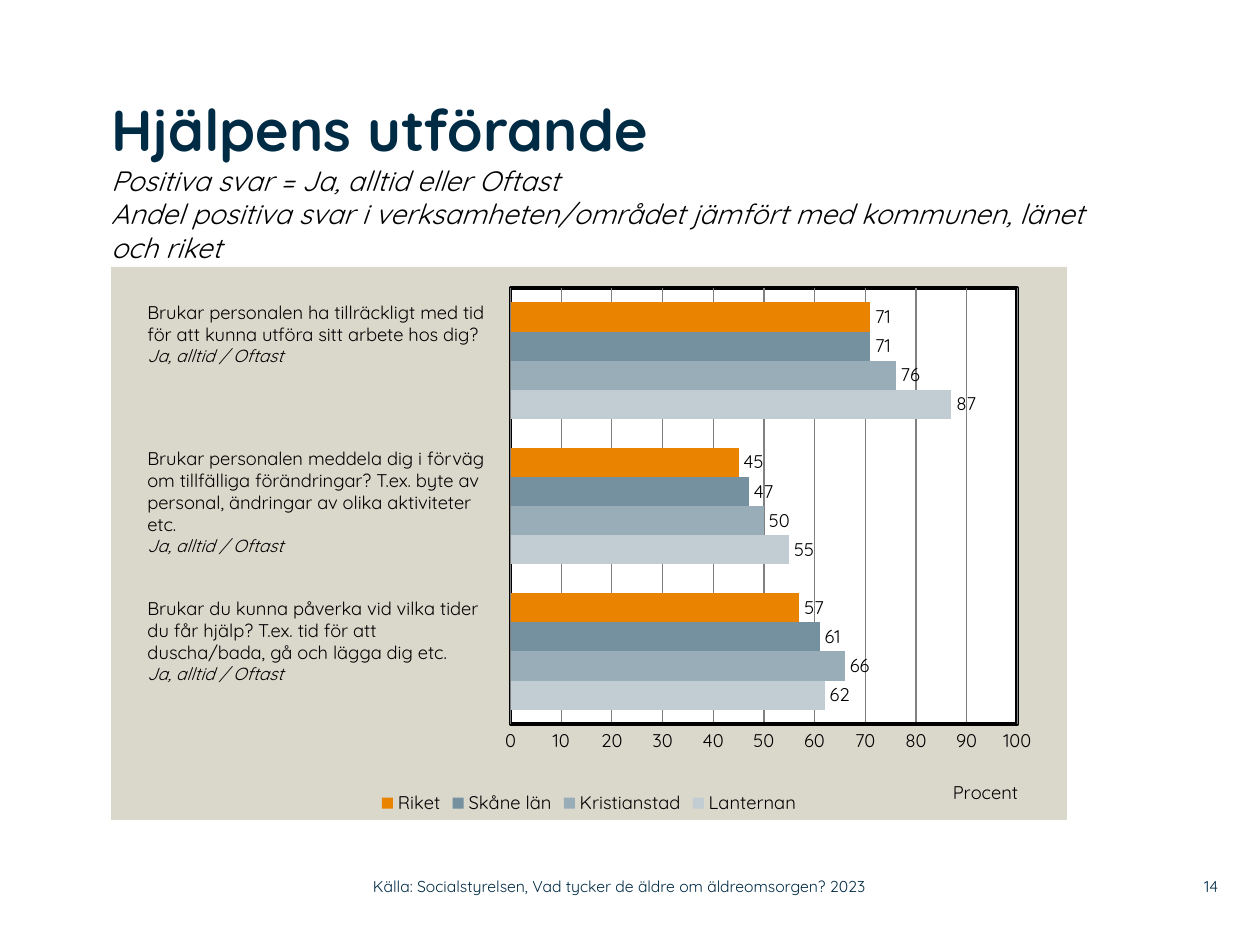
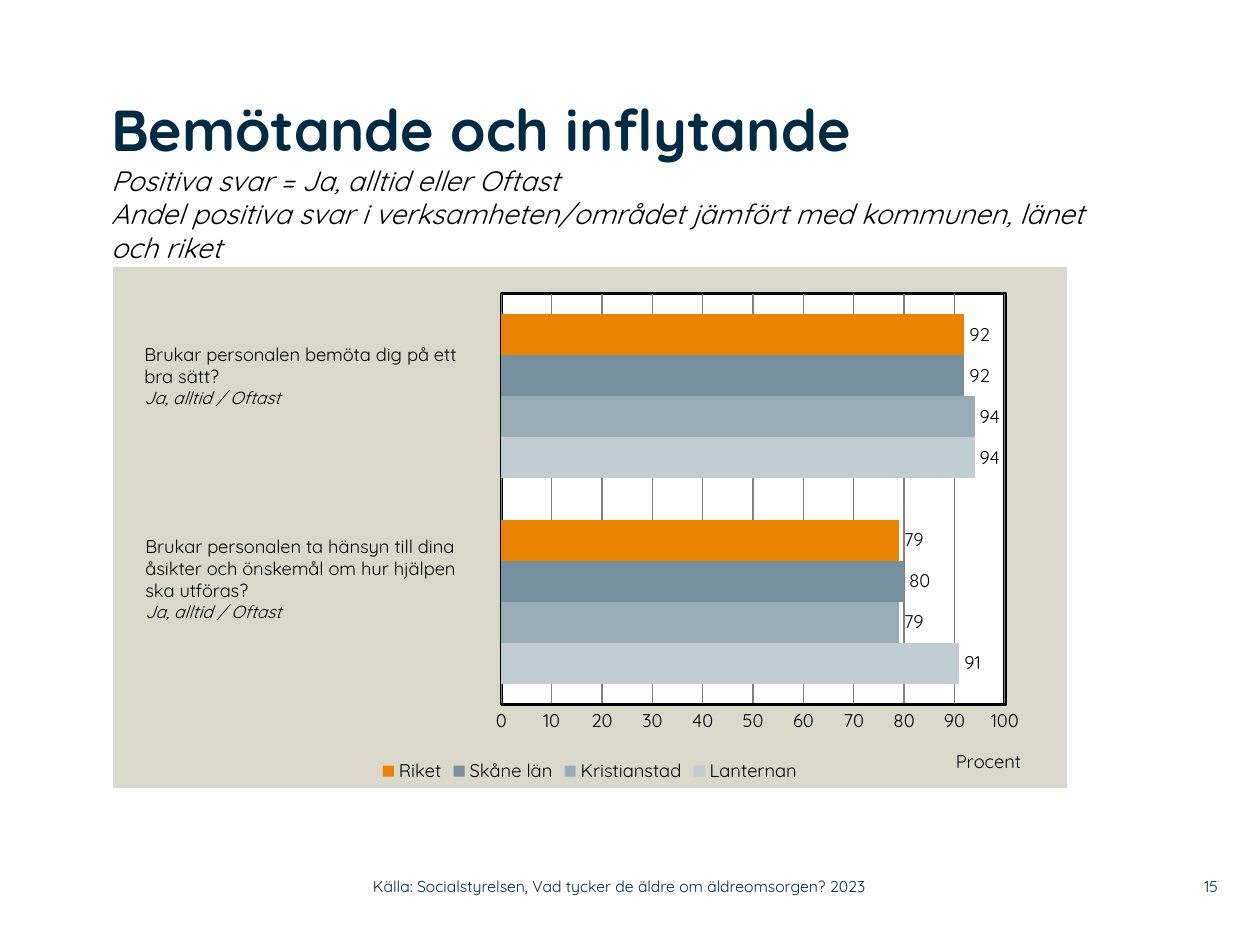
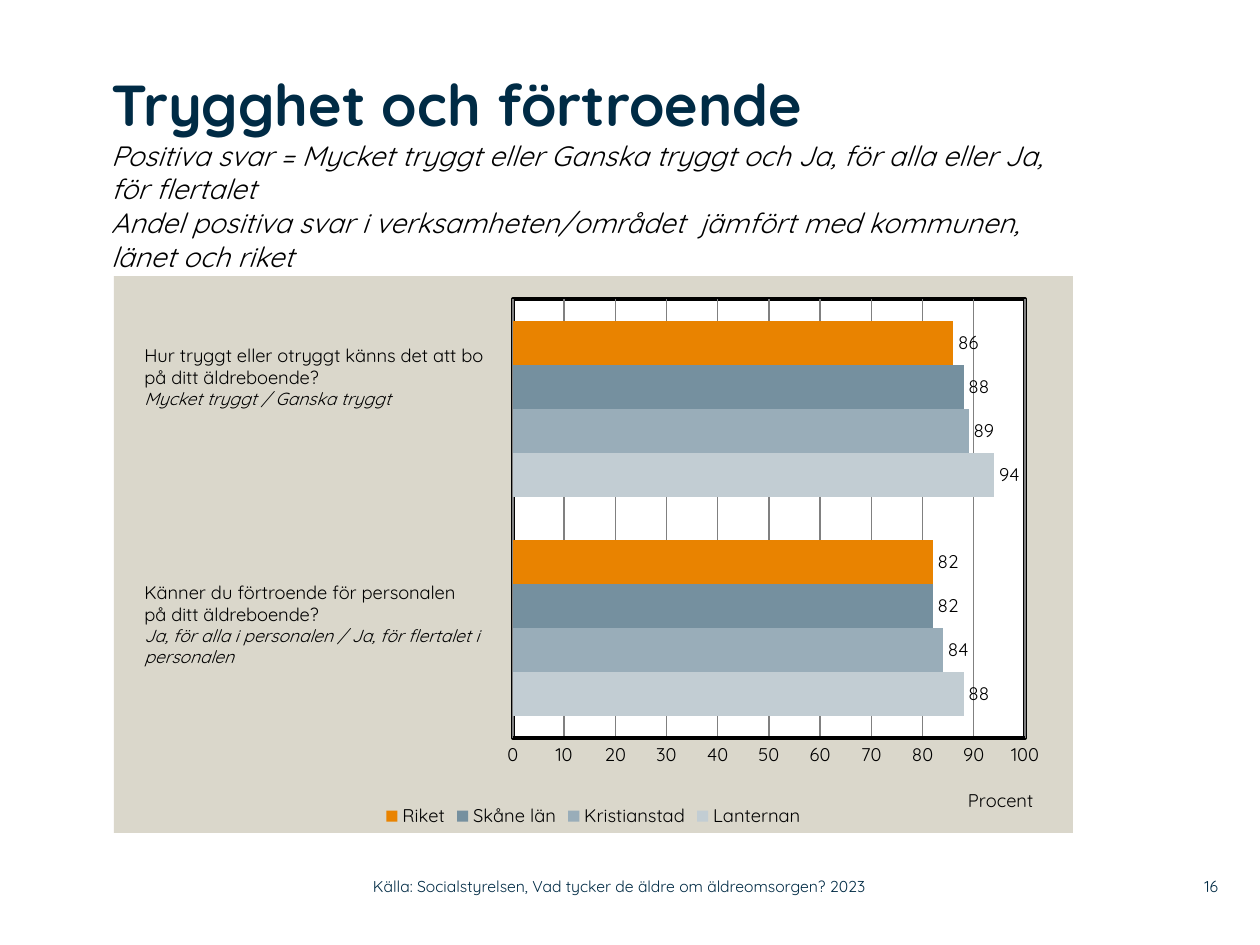
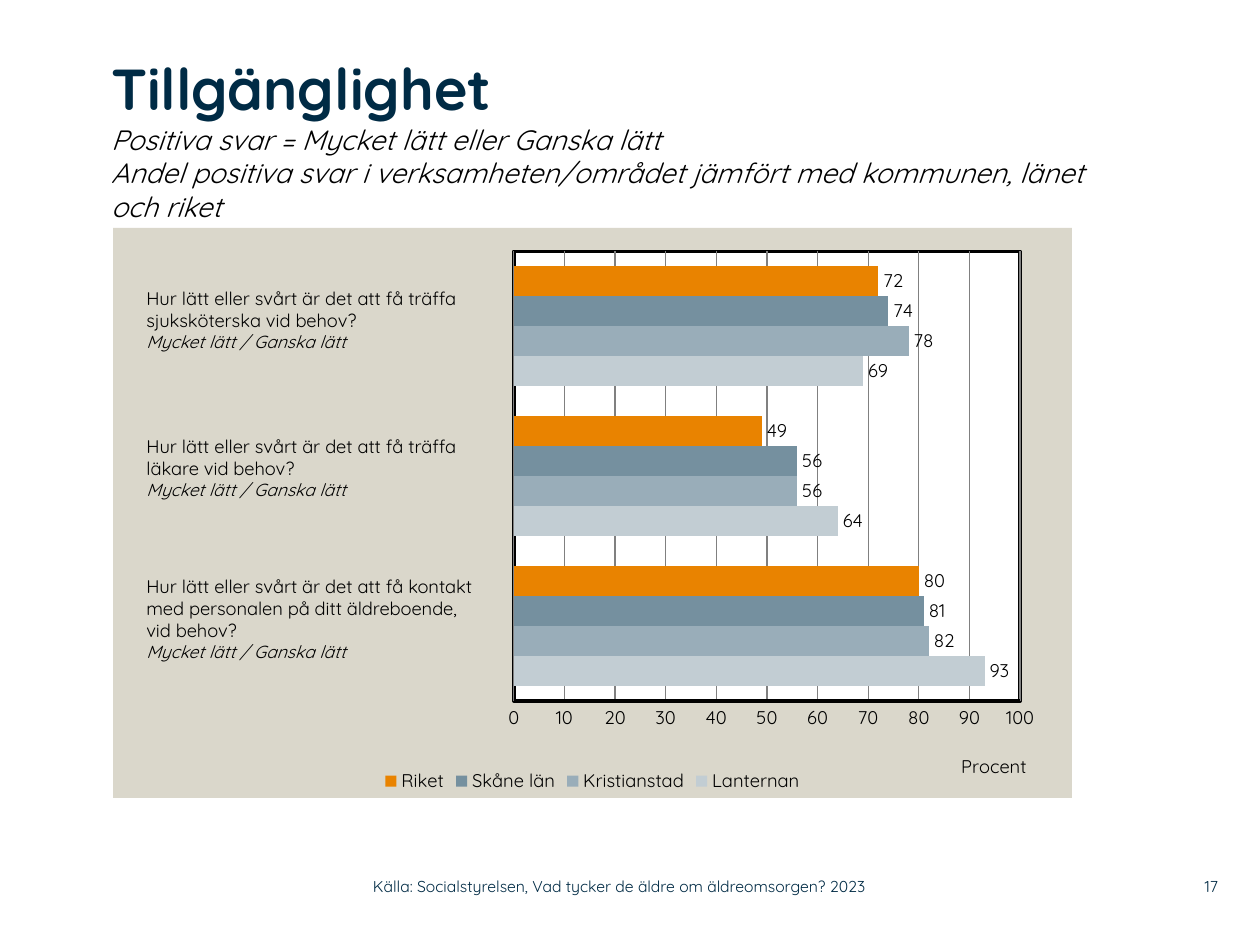
from dataclasses import dataclass

from lxml.etree import SubElement
from pptx import Presentation
from pptx.chart.data import CategoryChartData
from pptx.dml.color import RGBColor
from pptx.enum.chart import XL_CHART_TYPE, XL_LABEL_POSITION, XL_LEGEND_POSITION, XL_TICK_MARK
from pptx.enum.text import MSO_ANCHOR, MSO_AUTO_SIZE, PP_ALIGN
from pptx.oxml import parse_xml
from pptx.oxml.ns import nsdecls, qn
from pptx.util import Emu, Inches, Pt


@dataclass(frozen=True)
class Theme:
    """Colours, typeface and type sizes of the whole report."""
    font: str = "Quicksand"
    navy: str = "002B45"
    black: str = "000000"
    white: str = "FFFFFF"
    sand: str = "DAD7CB"
    grid: str = "808080"
    heading: float = 33
    subtitle: float = 16
    chart: float = 10.5
    answer: float = 10
    footer: float = 9
    border: float = 2
    grid_line: float = 0.75


THEME = Theme()
PX_PER_INCH = 126
SERIES_COLOURS = {
    "Lanternan": "C2CDD3",
    "Kristianstad": "99ADB9",
    "Skåne län": "75909F",
    "Riket": "E98300",
}
SOURCE = "Källa: Socialstyrelsen, Vad tycker de äldre om äldreomsorgen? 2023"
SOURCE_BOX = (373, 868, 558, 37)
NUMBER_BOX = (1159, 868, 59, 37)
FIRST_NUMBER = 14
COMPARISON = "Andel positiva svar i verksamheten/området jämfört med kommunen, länet och riket"
ALWAYS = "Ja, alltid / Oftast"
EASY = "Mycket lätt / Ganska lätt"

TOPICS = [
    {
        "heading": "Hjälpens utförande",
        "subtitles": ["Positiva svar = Ja, alltid eller Oftast", COMPARISON],
        "title_box": (111, 94, 982, 152),
        "chart_box": (111, 267, 956, 553),
        "plot": (0.418, 0.038, 0.53, 0.789),
        "unit_at": (0.877, 0.92),
        "values": [[62, 55, 87], [66, 50, 76], [61, 47, 71], [57, 45, 71]],
        "questions": [
            ((24, 28, 374, 102), ["Brukar personalen ha tillräckligt med tid",
                                  "för att kunna utföra sitt arbete hos dig?"], ALWAYS),
            ((24, 174, 377, 123), ["Brukar personalen meddela dig i förväg om tillfälliga förändringar? "
                                   "T.ex. byte av personal, ändringar av olika aktiviteter etc."], ALWAYS),
            ((24, 324, 374, 102), ["Brukar du kunna påverka vid vilka tider",
                                   "du får hjälp? T.ex. tid för att",
                                   "duscha/bada, gå och lägga dig etc."], ALWAYS),
        ],
    },
    {
        "heading": "Bemötande och inflytande",
        "subtitles": ["Positiva svar = Ja, alltid eller Oftast", COMPARISON],
        "title_box": (111, 94, 1013, 151),
        "chart_box": (113, 267, 954, 521),
        "plot": (0.407, 0.051, 0.528, 0.789),
        "unit_at": (0.88, 0.917),
        "values": [[91, 94], [79, 94], [80, 92], [79, 92]],
        "questions": [
            ((19, 70, 374, 102), ["Brukar personalen bemöta dig på ett", "bra sätt?"], ALWAYS),
            ((20, 262, 379, 123), ["Brukar personalen ta hänsyn till dina",
                                   "åsikter och önskemål om hur hjälpen",
                                   "ska utföras?"], ALWAYS),
        ],
    },
    {
        "heading": "Trygghet och förtroende",
        "subtitles": ["Positiva svar = Mycket tryggt eller Ganska tryggt och Ja, för alla eller Ja, för flertalet",
                      COMPARISON.replace("området ", "området  ")],
        "title_box": (111, 69, 977, 207),
        "chart_box": (114, 276, 959, 557),
        "plot": (0.416, 0.041, 0.534, 0.789),
        "unit_at": (0.887, 0.912),
        "values": [[88, 94], [84, 89], [82, 88], [82, 86]],
        "questions": [
            ((18, 62, 375, 102), ["Hur tryggt eller otryggt känns det att bo på ditt äldreboende?"],
             "Mycket tryggt / Ganska tryggt"),
            ((18, 299, 378, 123), ["Känner du förtroende för personalen", "på ditt äldreboende?"],
             "Ja, för alla i personalen / Ja, för flertalet i personalen"),
        ],
    },
    {
        "heading": "Tillgänglighet",
        "subtitles": ["Positiva svar = Mycket lätt eller Ganska lätt", COMPARISON],
        "title_box": (111, 53, 979, 175),
        "chart_box": (113, 228, 959, 570),
        "plot": (0.418, 0.041, 0.528, 0.789),
        "unit_at": (0.881, 0.916),
        "values": [[93, 64, 69], [82, 56, 78], [81, 56, 74], [80, 49, 72]],
        "questions": [
            ((21, 53, 377, 102), ["Hur lätt eller svårt är det att få träffa sjuksköterska vid behov?"], EASY),
            ((21, 201, 369, 102), ["Hur lätt eller svårt är det att få träffa", "läkare vid behov?"], EASY),
            ((21, 341, 379, 123), ["Hur lätt eller svårt är det att få kontakt",
                                   "med personalen på ditt äldreboende,",
                                   "vid behov?"], EASY),
        ],
    },
]


def px(length):
    """Turn pixels into EMU."""
    return Emu(round(length * Inches(1) / PX_PER_INCH))


def apply(target, formats):
    """Set each attribute named in a dict of format values."""
    for attribute, value in formats.items():
        setattr(target, attribute, value)


def style_font(font, size, colour=THEME.black, bold=False, italic=False):
    """Format a font in the report's typeface."""
    apply(font, {"name": THEME.font, "size": Pt(size), "bold": bold, "italic": italic})
    font.color.rgb = RGBColor.from_string(colour)


def style_line(line, colour, width):
    """Give a line its colour and width."""
    line.color.rgb = RGBColor.from_string(colour)
    line.width = Pt(width)


def write_paragraphs(frame, rows, align=PP_ALIGN.LEFT):
    """Fill a text frame with one paragraph for each text and its font values."""
    for index, (text, formats) in enumerate(rows):
        paragraph = frame.paragraphs[0] if index == 0 else frame.add_paragraph()
        paragraph.alignment = align
        run = paragraph.add_run()
        run.text = text
        style_font(run.font, **formats)


def add_label(slide, box, rows, align=PP_ALIGN.LEFT, **frame_formats):
    """Add a wrapping text box."""
    label = slide.shapes.add_textbox(*map(px, box))
    apply(label.text_frame, {"word_wrap": True, **frame_formats})
    write_paragraphs(label.text_frame, rows, align)


NO_MARGINS = dict.fromkeys(("margin_left", "margin_top", "margin_right", "margin_bottom"), 0)


def fill_title(slide, box, heading, subtitles):
    """Place the title with its explanatory lines."""
    title = slide.shapes.title
    apply(title, dict(zip(("left", "top", "width", "height"), map(px, box))))
    apply(title.text_frame, {"word_wrap": True, "auto_size": MSO_AUTO_SIZE.NONE,
                             "vertical_anchor": MSO_ANCHOR.TOP, **NO_MARGINS})
    rows = [(heading, {"size": THEME.heading, "colour": THEME.navy, "bold": True})]
    rows += [(subtitle, {"size": THEME.subtitle, "italic": True}) for subtitle in subtitles]
    write_paragraphs(title.text_frame, rows)


def set_layout(parent, index, settings):
    """Give a chart part a manual position."""
    for old in parent.findall(qn("c:layout")):
        parent.remove(old)
    layout = parse_xml(f"<c:layout {nsdecls('c')}><c:manualLayout/></c:layout>")
    for tag, value in settings.items():
        SubElement(layout[0], qn(f"c:{tag}")).set("val", str(value))
    parent.insert(index, layout)


def area_format(colour, outline):
    """Return the fill and outline of a chart area."""
    return parse_xml(
        f"<c:spPr {nsdecls('c', 'a')}><a:solidFill><a:srgbClr val='{colour}'/></a:solidFill>{outline}</c:spPr>")


def style_axes(chart, unit_at):
    """Hide the category axis and format the percentage axis."""
    chart.category_axis.visible = False
    percent = chart.value_axis
    apply(percent, {"minimum_scale": 0, "maximum_scale": 100, "major_unit": 10,
                    "has_major_gridlines": True, "major_tick_mark": XL_TICK_MARK.NONE,
                    "minor_tick_mark": XL_TICK_MARK.NONE})
    style_line(percent.format.line, THEME.black, THEME.border)
    style_line(percent.major_gridlines.format.line, THEME.grid, THEME.grid_line)
    style_font(percent.tick_labels.font, THEME.chart)
    unit = percent.axis_title
    write_paragraphs(unit.text_frame, [("Procent", {"size": THEME.chart})])
    set_layout(unit._element, 1, {"xMode": "edge", "yMode": "edge", "x": unit_at[0], "y": unit_at[1]})


def style_series(plot):
    """Colour the bars and label their values."""
    apply(plot, {"gap_width": 100, "overlap": 0, "vary_by_categories": False})
    for series in plot.series:
        series.format.fill.solid()
        series.format.fill.fore_color.rgb = RGBColor.from_string(SERIES_COLOURS[series.name])
        apply(series.data_labels, {"show_value": True, "position": XL_LABEL_POSITION.OUTSIDE_END})
        style_font(series.data_labels.font, THEME.chart)


def add_answers_chart(slide, box, values, plot_box, unit_at):
    """Add the bar chart that compares the unit with its surroundings."""
    data = CategoryChartData(number_format="0")
    data.categories = [str(number + 1) for number in range(len(values[0]))]
    for area, shares in zip(SERIES_COLOURS, values):
        data.add_series(area, shares)
    chart = slide.shapes.add_chart(XL_CHART_TYPE.BAR_CLUSTERED, *map(px, box), data).chart
    apply(chart, {"has_title": False, "has_legend": True})
    style_font(chart.font, THEME.chart)
    apply(chart.legend, {"position": XL_LEGEND_POSITION.BOTTOM, "include_in_layout": False})
    style_font(chart.legend.font, THEME.chart)
    style_axes(chart, unit_at)
    style_series(chart.plots[0])
    chart_root = chart._chartSpace
    plot_area = chart_root.chart.plotArea
    edges = {"layoutTarget": "inner", "xMode": "edge", "yMode": "edge"}
    set_layout(plot_area, 0, {**edges, **dict(zip("xywh", plot_box))})
    border = (f"<a:ln w='{Pt(THEME.border)}'><a:solidFill><a:srgbClr val='{THEME.black}'/>"
              "</a:solidFill></a:ln>")
    plot_area.append(area_format(THEME.white, border))
    chart_root.chart.addnext(area_format(THEME.sand, "<a:ln><a:noFill/></a:ln>"))


def add_questions(slide, box, questions):
    """Place the questions over the left part of the chart."""
    for (left, top, width, height), lines, answers in questions:
        rows = [(line, {"size": THEME.chart}) for line in lines]
        rows.append((answers, {"size": THEME.answer, "italic": True}))
        add_label(slide, (box[0] + left, box[1] + top, width, height), rows,
                  auto_size=MSO_AUTO_SIZE.SHAPE_TO_FIT_TEXT)


def add_footer(slide, number):
    """Add the page number and the source line."""
    formats = {"size": THEME.footer, "colour": THEME.navy}
    for box, text, align in ((NUMBER_BOX, str(number), PP_ALIGN.RIGHT), (SOURCE_BOX, SOURCE, PP_ALIGN.LEFT)):
        add_label(slide, box, [(text, formats)], align, vertical_anchor=MSO_ANCHOR.MIDDLE, **NO_MARGINS)


def add_topic_slide(presentation, number, topic):
    """Build one slide of survey results."""
    slide = presentation.slides.add_slide(presentation.slide_layouts[5])
    fill_title(slide, topic["title_box"], topic["heading"], topic["subtitles"])
    add_answers_chart(slide, topic["chart_box"], topic["values"], topic["plot"], topic["unit_at"])
    add_questions(slide, topic["chart_box"], topic["questions"])
    add_footer(slide, number)


def main():
    """Build and save the report."""
    presentation = Presentation()
    apply(presentation, {"slide_width": Inches(10), "slide_height": Inches(7.5)})
    for number, topic in enumerate(TOPICS, FIRST_NUMBER):
        add_topic_slide(presentation, number, topic)
    presentation.save("out.pptx")


if __name__ == "__main__":
    main()
